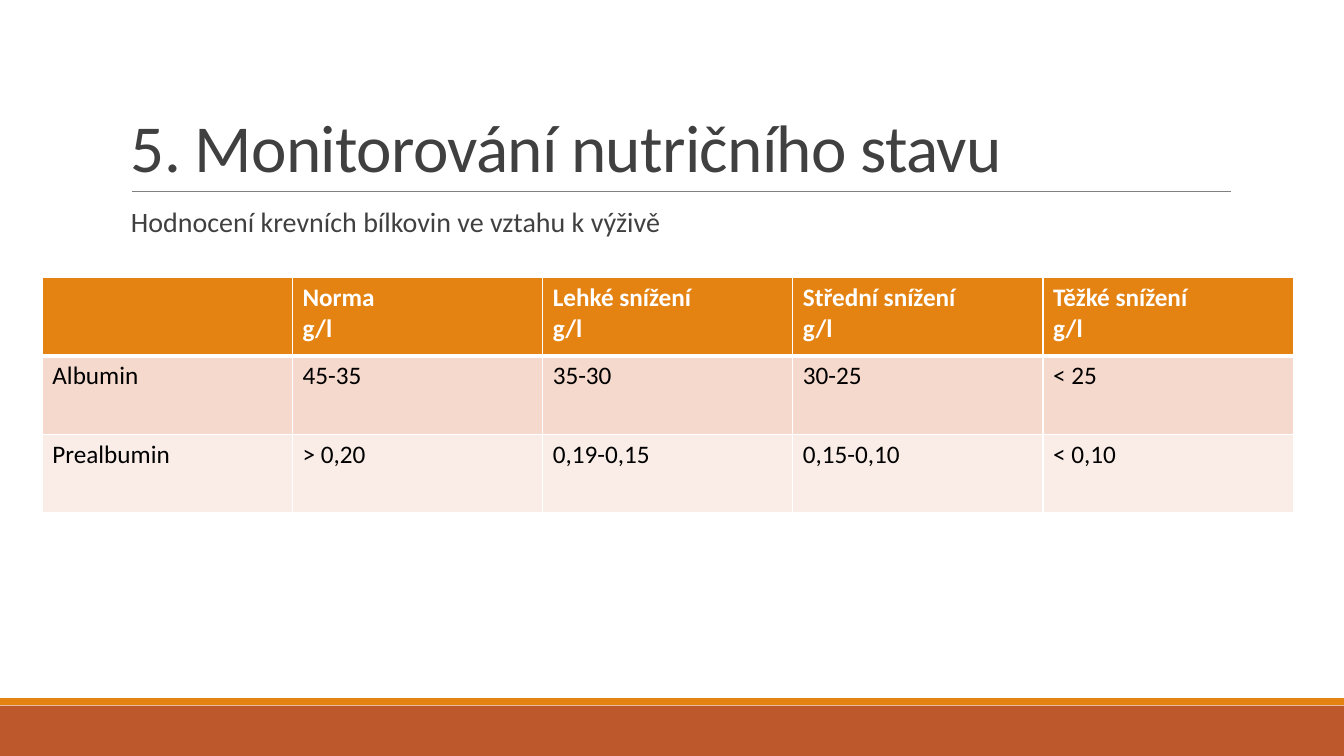
from lxml.etree import SubElement as Sub
from pptx import Presentation as Deck
from pptx.dml.color import RGBColor as Rgb
from pptx.enum.shapes import MSO_CONNECTOR as Link, MSO_SHAPE as Form
from pptx.enum.text import MSO_ANCHOR as Anchor
from pptx.oxml.ns import qn
from pptx.util import Pt

TITLE = "5. Monitorování nutričního stavu"
LEAD = "Hodnocení krevních bílkovin ve vztahu k výživě"
ROWS = [
    ("", "Norma\ng/l", "Lehké snížení\ng/l", "Střední snížení\ng/l", "Těžké snížení\ng/l"),
    ("Albumin", "45-35", "35-30", "30-25", "< 25"),
    ("Prealbumin", "> 0,20", "0,19-0,15", "0,15-0,10", "< 0,10"),
]
THEME = {
    "font": "Calibri",
    "title": 48, "lead": 20, "cell": 18,
    "ink": "404040", "black": "000000", "white": "FFFFFF",
    "rule": "808080", "rust": "BD582C", "amber": "E48312",
    "rows": ("E48312", "F5D9CC", "FAEDE7"),
}
WIDE, HIGH = 960, 540
BARS = [(504, 36, "rust"), (498.75, 5.05, "amber")]
LEFT, TOP, COL, ROW = 30.24, 198, 178.7, 56.16


def tint(code):
    return Rgb.from_string(code)


def write(para, text, size, color, bold=False):
    run = para.add_run()
    run.text = text
    font = run.font
    font.name, font.size, font.bold = THEME["font"], Pt(size), bold
    font.color.rgb = tint(color)
    return run


def add_text(slide, box, text, size, anchor, space):
    frame = slide.shapes.add_textbox(*map(Pt, box)).text_frame
    frame.word_wrap = True
    frame.vertical_anchor = anchor
    para = frame.paragraphs[0]
    para.line_spacing = space
    return write(para, text, size, THEME["ink"])


def add_edge(cell, side, width):
    edge = Sub(cell._tc.get_or_add_tcPr(), qn("a:ln" + side), w=str(Pt(width)))
    fill = Sub(edge, qn("a:solidFill"))
    Sub(fill, qn("a:srgbClr"), val=THEME["white"])


def add_cell(cell, text, row):
    head = row == 0
    widths = {"L": 1, "R": 1, "T": 3 if row == 1 else 1, "B": 3 if head else 1}
    for side, width in widths.items():
        add_edge(cell, side, width)
    cell.fill.solid()
    cell.fill.fore_color.rgb = tint(THEME["rows"][row])
    frame = cell.text_frame
    color = THEME["white" if head else "black"]
    for i, line in enumerate(text.split("\n") if text else []):
        para = frame.add_paragraph() if i else frame.paragraphs[0]
        write(para, line, THEME["cell"], color, head)


def add_grid(slide):
    count, span = len(ROWS), len(ROWS[0])
    box = LEFT, TOP, COL * span, ROW * count
    grid = slide.shapes.add_table(count, span, *map(Pt, box)).table
    for col in grid.columns:
        col.width = Pt(COL)
    for r, row in enumerate(ROWS):
        grid.rows[r].height = Pt(ROW)
        for c, text in enumerate(row):
            add_cell(grid.cell(r, c), text, r)


def main():
    deck = Deck()
    deck.slide_width, deck.slide_height = Pt(WIDE), Pt(HIGH)
    slide = deck.slides.add_slide(deck.slide_layouts[6])
    for top, high, name in BARS:
        bar = slide.shapes.add_shape(Form.RECTANGLE, 0, Pt(top), Pt(WIDE), Pt(high))
        bar.shadow.inherit = False
        bar.fill.solid()
        bar.fill.fore_color.rgb = tint(THEME[name])
        bar.line.fill.background()
    ends = map(Pt, (94.3, 136.8, 879.1, 136.8))
    rule = slide.shapes.add_connector(Link.STRAIGHT, *ends)
    rule.line.color.rgb = tint(THEME["rule"])
    rule.line.width = Pt(0.5)
    Sub(rule._element.spPr, qn("a:effectLst"))
    title = add_text(slide, (86.4, 22.3, 792, 114.5), TITLE, THEME["title"], Anchor.BOTTOM, 0.85)
    title.font._element.set("spc", "-50")
    add_text(slide, (86.4, 145.4, 792, 316.8), LEAD, THEME["lead"], Anchor.TOP, 0.9)
    add_grid(slide)
    deck.save("out.pptx")


if __name__ == "__main__":
    main()
